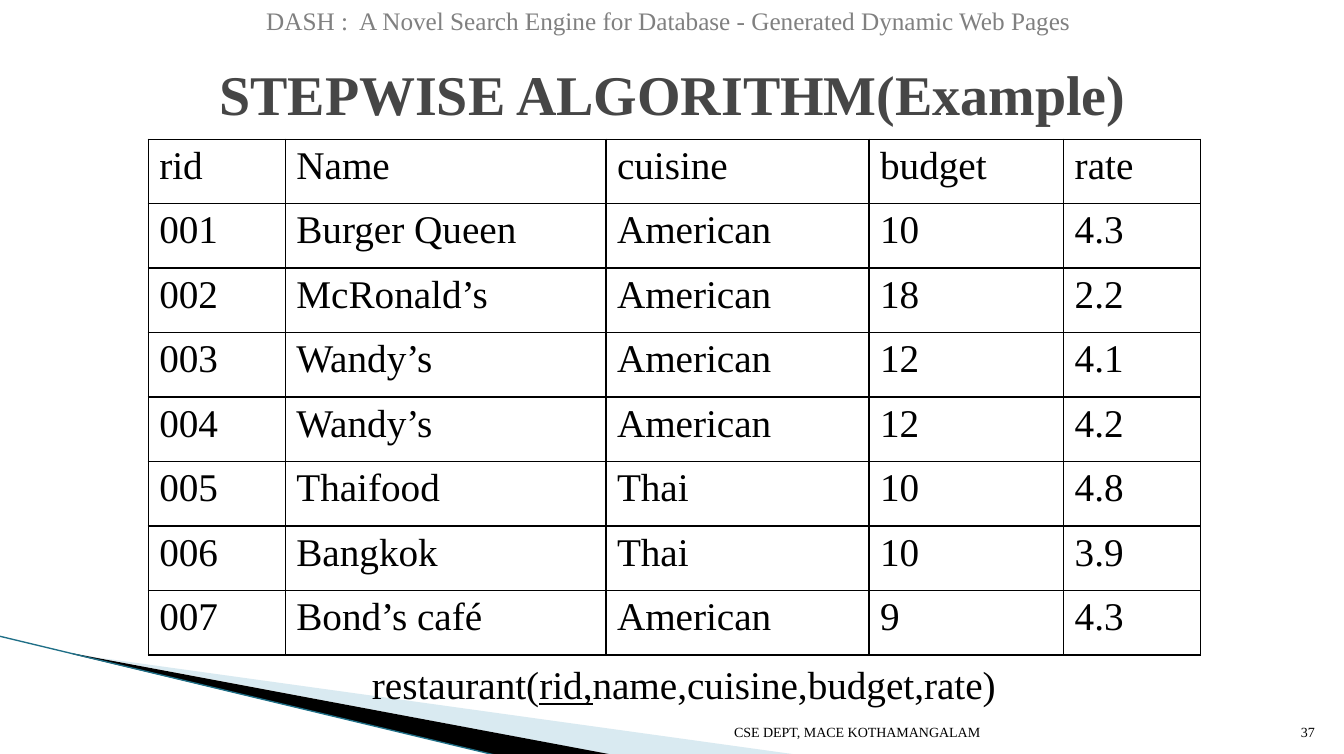
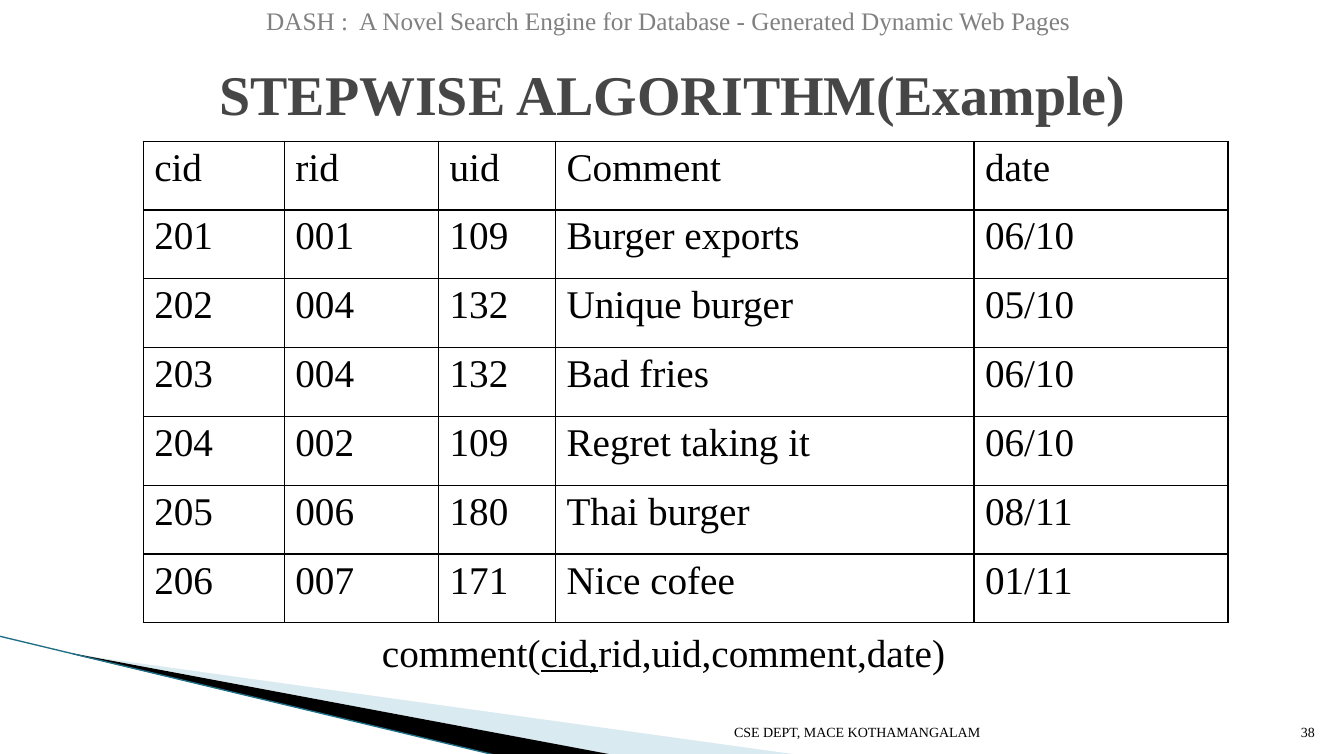
from lxml import etree
from pptx import Presentation
from pptx import util as u
from pptx.dml.color import RGBColor
from pptx.enum import shapes, text
from pptx.oxml.ns import qn

HEAD = "DASH :  A Novel Search Engine for Database - Generated Dynamic Web Pages"
TITLE = "STEPWISE ALGORITHM(Example)"
FOOT = "CSE DEPT, MACE KOTHAMANGALAM"
FIRST = 37

# Boxes are left, top, width, height in px, at 100 px to the inch.
SLIDES = [
    dict(
        at=(147, 138), cols=[136, 318, 261, 193, 136], high=64,
        rows=[
            ("rid", "Name", "cuisine", "budget", "rate"),
            ("001", "Burger Queen", "American", "10", "4.3"),
            ("002", "McRonald’s", "American", "18", "2.2"),
            ("003", "Wandy’s", "American", "12", "4.1"),
            ("004", "Wandy’s", "American", "12", "4.2"),
            ("005", "Thaifood", "Thai", "10", "4.8"),
            ("006", "Bangkok", "Thai", "10", "3.9"),
            ("007", "Bond’s café", "American", "9", "4.3"),
        ],
        schema=("restaurant(", "rid,", "name,cuisine,budget,rate)"),
        box=(359, 650, 978, 57),
    ),
    dict(
        at=(142, 140), cols=[140, 153, 116, 415, 252], high=68.3,
        rows=[
            ("cid", "rid", "uid", "Comment", "date"),
            ("201", "001", "109", "Burger exports", "06/10"),
            ("202", "004", "132", "Unique burger", "05/10"),
            ("203", "004", "132", "Bad fries", "06/10"),
            ("204", "002", "109", "Regret taking it", "06/10"),
            ("205", "006", "180", "Thai burger", "08/11"),
            ("206", "007", "171", "Nice cofee", "01/11"),
        ],
        schema=("comment(", "cid,", "rid,uid,comment,date)"),
        box=(369, 618, 778, 57),
    ),
]
WEDGES = [
    ("pale", 40, [(73, 649), (793, 749), (608, 749), (73, 648)]),
    ("ink", 100, [(71, 648), (609, 749), (496, 750), (72, 649)]),
]
EDGE = (-1, 631, 495, 750)


class Theme:
    font = "Times New Roman"
    color = dict(ink="000000", title="464646", head="808080",
                 pale="A0CBDC", edge="1F6F87", paper="FFFFFF")
    size = dict(title=40, body=28, head=18, foot=10)


SCALE = 9144
ALIGN = text.PP_ALIGN
ANCHOR = text.MSO_ANCHOR


def px(n):
    return u.Emu(round(n * SCALE))


def rgb(name):
    return RGBColor.from_string(Theme.color[name])


def write(frame, *parts, size="body", color="ink", bold=False, align=ALIGN.LEFT,
          anchor=ANCHOR.TOP, wrap=True, under=None):
    """Fill a frame with one paragraph; under is the index of the underlined part."""
    frame.word_wrap = wrap
    frame.auto_size = text.MSO_AUTO_SIZE.NONE
    frame.vertical_anchor = anchor
    para = frame.paragraphs[0]
    para.alignment = align
    for i, part in enumerate(parts):
        run = para.add_run()
        run.text = part
        font = run.font
        font.name, font.size, font.bold = Theme.font, u.Pt(Theme.size[size]), bold
        font.color.rgb = rgb(color)
        if i == under:
            font.underline = True


def label(slide, box, *parts, **style):
    write(slide.shapes.add_textbox(*map(px, box)).text_frame, *parts, **style)


def decorate(slide, layout):
    """Draw the corner wedges and move them to the layout that all slides share."""
    for color, alpha, points in WEDGES:
        path = slide.shapes.build_freeform(*points[0], scale=SCALE)
        path.add_line_segments(points[1:], close=True)
        wedge = path.convert_to_shape()
        wedge.shadow.inherit = False
        wedge.fill.solid()
        wedge.fill.fore_color.rgb = rgb(color)
        wedge.line.fill.background()
        tint = wedge.element.spPr.find(".//" + qn("a:srgbClr"))
        etree.SubElement(tint, qn("a:alpha"), val=str(alpha * 1000))
        layout.shapes.element.append(wedge.element)
    edge = slide.shapes.add_connector(shapes.MSO_CONNECTOR.STRAIGHT, *map(px, EDGE))
    edge.line.color.rgb = rgb("edge")
    edge.line.width = u.Pt(0.95)
    etree.SubElement(edge.element.spPr, qn("a:effectLst"))
    layout.shapes.element.append(edge.element)


def border(cell):
    props = cell._tc.get_or_add_tcPr()
    for side in "LRTB":
        line = etree.SubElement(props, qn("a:ln" + side), w=str(u.Pt(1)))
        fill = etree.SubElement(line, qn("a:solidFill"))
        etree.SubElement(fill, qn("a:srgbClr"), val=Theme.color["ink"])


def grid(slide, at, cols, high, rows):
    size = sum(cols), high * len(rows)
    table = slide.shapes.add_table(len(rows), len(cols), *map(px, at + size)).table
    table.first_row = table.horz_banding = False
    for col, wide in zip(table.columns, cols):
        col.width = px(wide)
    for line, row in zip(table.rows, rows):
        line.height = px(high)
        for cell, word in zip(line.cells, row):
            border(cell)
            cell.fill.solid()
            cell.fill.fore_color.rgb = rgb("paper")
            cell.margin_left = cell.margin_right = px(11)
            cell.margin_top = cell.margin_bottom = px(5)
            write(cell.text_frame, word)


def build(slide, page, data):
    foot = dict(size="foot", align=ALIGN.RIGHT, anchor=ANCHOR.BOTTOM)
    label(slide, (639, 699, 343, 40), FOOT, **foot)
    label(slide, (1261, 699, 53, 40), str(page), **foot)
    title = slide.shapes.title
    title.left, title.top, title.width, title.height = map(px, (67, 30, 1200, 125))
    write(title.text_frame, TITLE, size="title", color="title", bold=True,
          align=ALIGN.CENTER, anchor=ANCHOR.MIDDLE)
    label(slide, (250, 0, 826, 40), HEAD, size="head", color="head",
          align=ALIGN.CENTER, wrap=False)
    grid(slide, data["at"], data["cols"], data["high"], data["rows"])
    label(slide, data["box"], *data["schema"], under=1)


def main():
    deck = Presentation()
    deck.slide_width, deck.slide_height = px(1333), px(748)
    layout = deck.slide_layouts[5]
    for i, data in enumerate(SLIDES):
        slide = deck.slides.add_slide(layout)
        if i == 0:
            decorate(slide, layout)
        build(slide, FIRST + i, data)
    deck.save("out.pptx")


if __name__ == "__main__":
    main()
